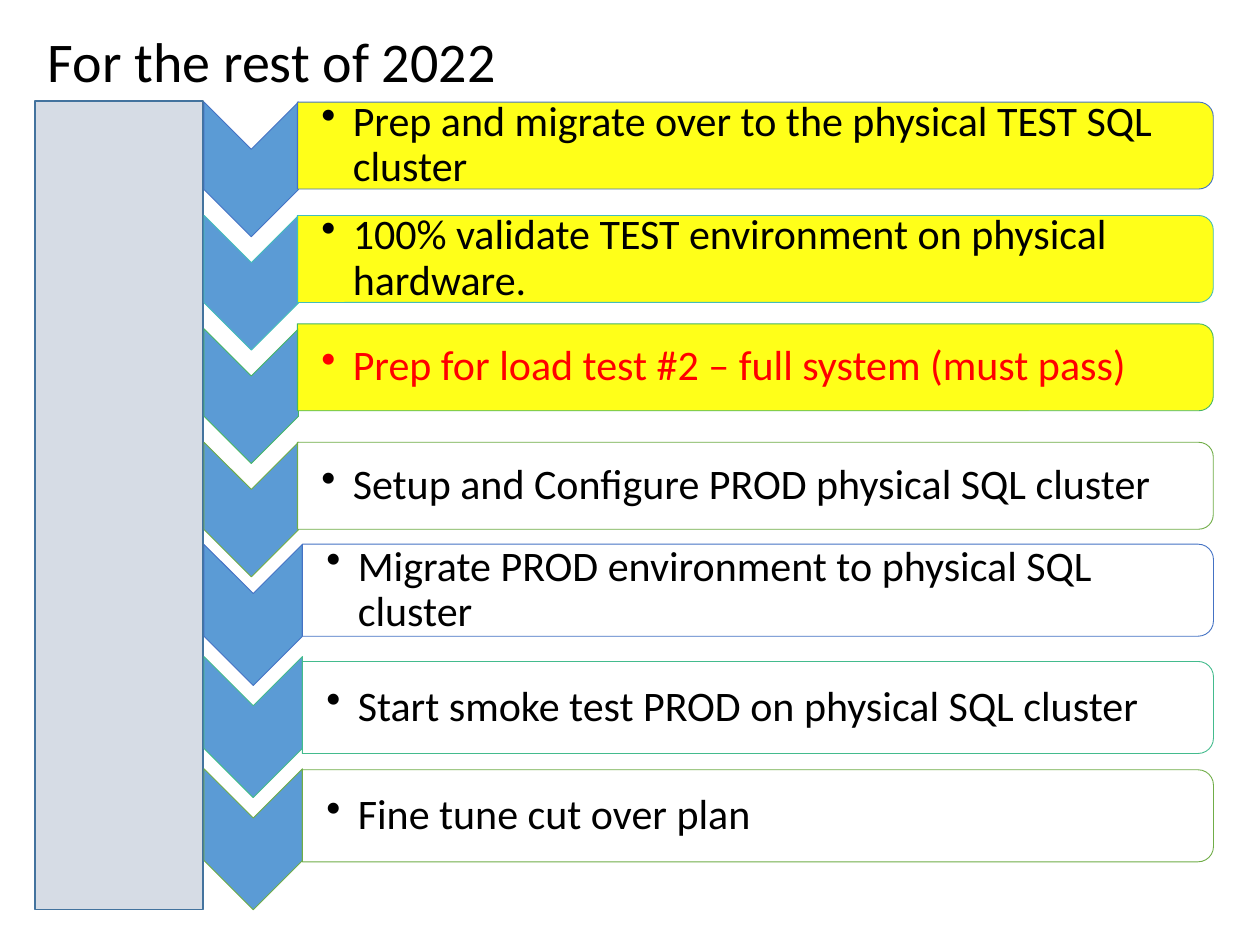
from dataclasses import dataclass

from lxml.etree import SubElement
from pptx import Presentation
from pptx.dml.color import RGBColor
from pptx.enum.shapes import MSO_SHAPE
from pptx.enum.text import MSO_ANCHOR
from pptx.oxml.ns import qn
from pptx.shapes.autoshape import Shape
from pptx.shapes.group import GroupShape
from pptx.slide import Slide
from pptx.text.text import _Paragraph
from pptx.util import Pt

BLACK = RGBColor(0x00, 0x00, 0x00)
WHITE = RGBColor(0xFF, 0xFF, 0xFF)
RED = RGBColor(0xFF, 0x00, 0x00)
YELLOW = RGBColor(0xFF, 0xFF, 0x00)
GREY = RGBColor(0xD6, 0xDC, 0xE5)
STEEL = RGBColor(0x43, 0x73, 0x9E)
SKY = RGBColor(0x5B, 0x9B, 0xD5)
BLUE = RGBColor(0x44, 0x72, 0xC4)
TEAL = RGBColor(0x43, 0xBE, 0xB9)
MINT = RGBColor(0x43, 0xBB, 0x8D)
EMERALD = RGBColor(0x45, 0xB6, 0x64)
GREEN = RGBColor(0x70, 0xAD, 0x47)
FONT = "Calibri"


@dataclass
class Step:
    text: str
    bar_mid: float
    line: RGBColor
    fill: RGBColor = WHITE
    color: RGBColor = BLACK


@dataclass
class Section:
    chevron_x: float
    chevron_y: float
    pitch: float
    chevron_length: float
    chevron_width: float
    bar_left: float
    bar_width: float
    bar_height: float
    text_height: float
    steps: list[Step]


SECTIONS = [
    Section(143.6, 96.8, 64.8, 77, 54, 169.9, 523.4, 49.7, 45.4, [
        Step("Prep and migrate over to the physical TEST SQL cluster", 83.2, BLUE, YELLOW),
        Step("100% validate TEST environment on physical hardware.", 148, TEAL, YELLOW),
        Step("Prep for load test #2 – full system (must pass)", 209.9, EMERALD, YELLOW, RED),
        Step("Setup and Configure PROD physical SQL cluster", 277.6, GREEN),
    ]),
    Section(144.7, 351.4, 64.1, 80.6, 56.2, 172.8, 520.6, 52.6, 47.5, [
        Step("Migrate PROD environment to physical SQL cluster", 337.3, BLUE),
        Step("Start smoke test PROD on physical SQL cluster", 404.3, MINT),
        Step("Fine tune cut over plan", 466.2, GREEN),
    ]),
]


def style(sp: Shape, fill: RGBColor, line: RGBColor, weight: float) -> None:
    sp.shadow.inherit = False
    sp.fill.solid()
    sp.fill.fore_color.rgb = fill
    sp.line.color.rgb = line
    sp.line.width = Pt(weight)


def add_turned(g: GroupShape, kind: MSO_SHAPE, x: float, y: float,
               width: float, height: float, fill: RGBColor, line: RGBColor) -> Shape:
    sp = g.shapes.add_shape(kind, Pt(x - width / 2), Pt(y - height / 2), Pt(width), Pt(height))
    sp.rotation = 90
    style(sp, fill, line, 0.5)
    return sp


def set_opacity(sp: Shape, percent: int) -> None:
    color = sp._element.spPr.find(qn("a:solidFill"))[0]
    SubElement(color, qn("a:alpha"), val=str(percent * 1000))


def add_run(p: _Paragraph, text: str, size: float, color: RGBColor) -> None:
    r = p.add_run()
    r.text = text
    r.font.name = FONT
    r.font.size = Pt(size)
    r.font.color.rgb = color


def add_bullet(p: _Paragraph) -> None:
    p.level = 1
    p.line_spacing = 0.9
    pPr = p._p.get_or_add_pPr()
    pPr.set("marL", str(Pt(18)))
    pPr.set("indent", str(-Pt(18)))
    SubElement(SubElement(pPr, qn("a:spcAft")), qn("a:spcPct"), val="15000")
    SubElement(pPr, qn("a:buChar"), char="•")


def add_step_text(g: GroupShape, sec: Section, step: Step) -> None:
    sp = g.shapes.add_textbox(Pt(sec.bar_left), Pt(step.bar_mid - sec.text_height / 2),
                              Pt(sec.bar_width - 2.6), Pt(sec.text_height))
    tf = sp.text_frame
    tf.word_wrap = True
    tf.vertical_anchor = MSO_ANCHOR.MIDDLE
    tf.margin_left = Pt(13.7)
    tf.margin_top = tf.margin_right = tf.margin_bottom = Pt(1.4)
    p = tf.paragraphs[0]
    add_bullet(p)
    add_run(p, step.text, 24, step.color)


def add_section(s: Slide, sec: Section) -> None:
    g = s.shapes.add_group_shape()
    for i, step in enumerate(sec.steps):
        add_turned(g, MSO_SHAPE.CHEVRON, sec.chevron_x, sec.chevron_y + i * sec.pitch,
                   sec.chevron_length, sec.chevron_width, SKY, step.line)
        bar = add_turned(g, MSO_SHAPE.ROUND_2_SAME_RECTANGLE,
                         sec.bar_left + sec.bar_width / 2, step.bar_mid,
                         sec.bar_height, sec.bar_width, step.fill, step.line)
        set_opacity(bar, 90)
        add_step_text(g, sec, step)


def add_title(s: Slide, text: str) -> None:
    tf = s.shapes.add_textbox(Pt(20.2), Pt(11.5), Pt(663), Pt(46)).text_frame
    tf.word_wrap = True
    add_run(tf.paragraphs[0], text, 32, BLACK)


def main() -> None:
    prs = Presentation()
    prs.slide_width, prs.slide_height = Pt(720), Pt(540)
    s = prs.slides.add_slide(prs.slide_layouts[6])
    panel = s.shapes.add_shape(MSO_SHAPE.RECTANGLE, Pt(20.2), Pt(57.6), Pt(95.8), Pt(462.2))
    style(panel, GREY, STEEL, 1)
    add_title(s, "For the rest of 2022")
    for sec in SECTIONS:
        add_section(s, sec)
    prs.save("out.pptx")


if __name__ == "__main__":
    main()
